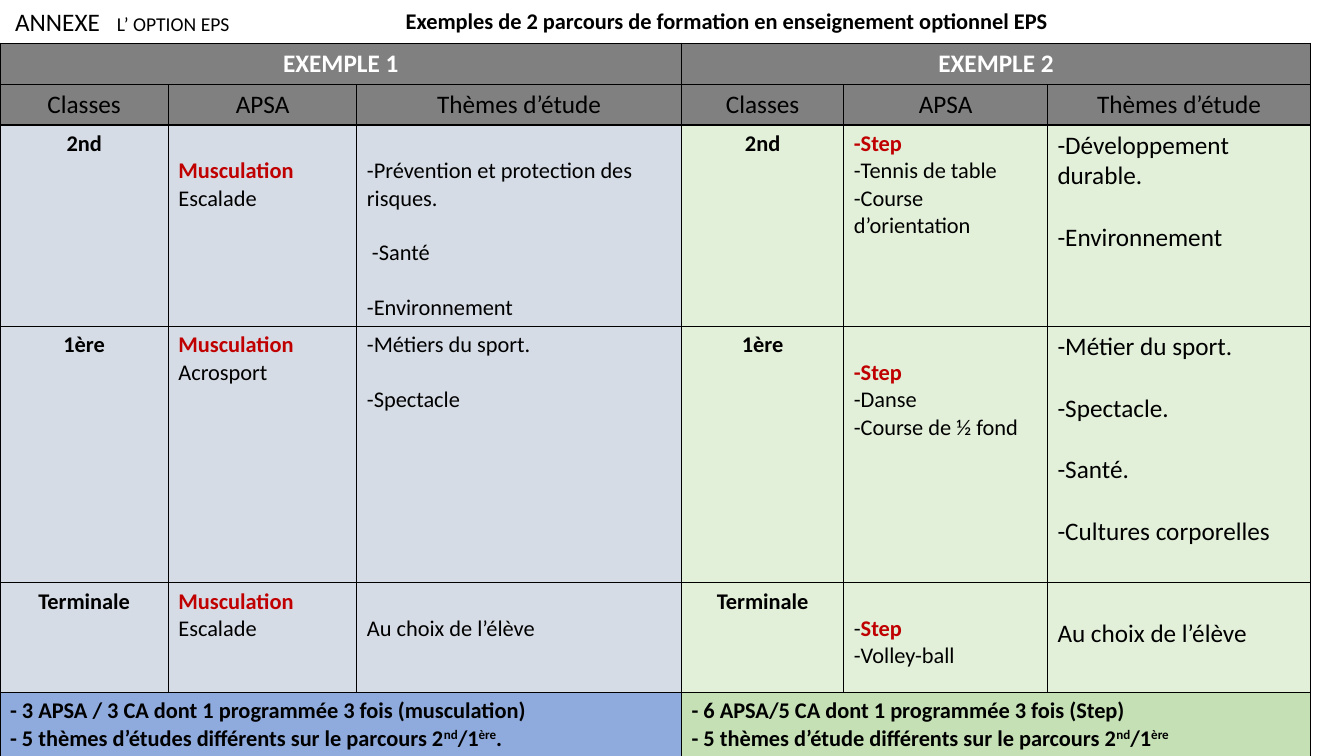
from collections import namedtuple

from lxml.etree import SubElement
from pptx import Presentation
from pptx.dml.color import RGBColor
from pptx.enum.text import MSO_ANCHOR, MSO_AUTO_SIZE, PP_ALIGN
from pptx.oxml.ns import qn
from pptx.util import Inches, Pt

BLACK = RGBColor(0x00, 0x00, 0x00)
WHITE = RGBColor(0xFF, 0xFF, 0xFF)
RED = RGBColor(0xC0, 0x00, 0x00)
GREY = RGBColor(0x80, 0x80, 0x80)
PALE_BLUE = RGBColor(0xD6, 0xDC, 0xE5)
PALE_GREEN = RGBColor(0xE2, 0xF0, 0xD9)
BLUE = RGBColor(0x8F, 0xAA, 0xDC)
GREEN = RGBColor(0xC5, 0xE0, 0xB4)

LINE_HEIGHT = 1.22
COLUMN_WIDTHS = [1.67, 1.87, 3.22, 1.61, 2.02, 2.61]
ROW_HEIGHTS = [0.41, 0.4, 2, 2.54, 1.09, 0.64]
HEADINGS = ["Classes", "APSA", "Thèmes d’étude"]
LEVELS = ["2nd", "1ère", "Terminale"]

PLAIN = {"size": Pt(16), "bold": False, "color": BLACK}
BOLD = {**PLAIN, "bold": True}
LEAD = {**BOLD, "color": RED}
LARGE = {**PLAIN, "size": Pt(18)}
HEADER = {**LARGE, "bold": True, "color": WHITE}
SMALL = {**PLAIN, "size": Pt(14)}
RAISED = {**BOLD, "baseline": 30000}

Line = namedtuple("Line", "runs gap", defaults=[False])
Example = namedtuple("Example", "title fill summary_fill sports themes summary")


def line(text, style=PLAIN, gap=False):
    """Return a line of one run, optionally preceded by a one-line gap."""
    return Line([(text, style)], gap)


def summary(first, second, ending=()):
    """Return the two closing lines of an example."""
    runs = [(second, BOLD), ("nd", RAISED), ("/1", BOLD), ("ère", RAISED), *ending]
    return [line(first, BOLD), Line(runs)]


EXAMPLES = [
    Example(
        "EXEMPLE 1", PALE_BLUE, BLUE,
        [
            [line("Musculation", LEAD, True), line("Escalade")],
            [line("Musculation", LEAD), line("Acrosport")],
            [line("Musculation", LEAD), line("Escalade")],
        ],
        [
            [line("-Prévention et protection des risques.", gap=True),
             line(" -Santé", gap=True), line("-Environnement", gap=True)],
            [line("-Métiers du sport."), line("-Spectacle", gap=True)],
            [line("Au choix de l’élève", gap=True)],
        ],
        summary("- 3 APSA / 3 CA dont 1 programmée 3 fois (musculation)",
                "- 5 thèmes d’études différents sur le parcours 2", [(".", BOLD)]),
    ),
    Example(
        "EXEMPLE 2", PALE_GREEN, GREEN,
        [
            [line("-Step", LEAD), line("-Tennis de table"), line("-Course d’orientation")],
            [line("-Step", LEAD, True), line("-Danse"), line("-Course de ½ fond")],
            [Line([("-", PLAIN), ("Step", LEAD)], True), line("-Volley-ball")],
        ],
        [
            [line("-Développement durable.", LARGE), line("-Environnement", LARGE, True)],
            [line("-Métier du sport.", LARGE), line("-Spectacle.", LARGE, True),
             line("-Santé.", LARGE, True), line("-Cultures corporelles", LARGE, True)],
            [line("Au choix de l’élève", LARGE, True)],
        ],
        summary("- 6 APSA/5 CA dont 1 programmée 3 fois (Step)",
                "- 5 thèmes d’étude différents sur le parcours 2"),
    ),
]


class SlideBuilder:
    """Hold the font and the current slide, and add its elements."""

    def __init__(self, slide, font_name):
        """Keep the slide and the font name."""
        self.slide = slide
        self.font_name = font_name

    def add_run(self, paragraph, text, style):
        """Add a run with the values of a style."""
        run = paragraph.add_run()
        run.text = text
        run.font.name = self.font_name
        for name, value in style.items():
            if name == "color":
                run.font.color.rgb = value
            elif name == "baseline":
                run._r.get_or_add_rPr().set("baseline", str(value))
            else:
                setattr(run.font, name, value)

    def add_text(self, box, runs, frame_format, paragraph_format, tab=None):
        """Add a one-paragraph text box, with an optional tab stop."""
        shape = self.slide.shapes.add_textbox(*map(Inches, box))
        paragraph = shape.text_frame.paragraphs[0]
        if tab:
            tab_list = SubElement(paragraph._p.get_or_add_pPr(), qn("a:tabLst"))
            SubElement(tab_list, qn("a:tab"), pos=str(Inches(tab)), algn="l")
        for target, values in ((shape.text_frame, frame_format), (paragraph, paragraph_format)):
            for name, value in values.items():
                setattr(target, name, value)
        for text, style in runs:
            self.add_run(paragraph, text, style)

    def add_table(self, left, top, widths, heights):
        """Add an unbanded table with thin black borders."""
        box = map(Inches, (left, top, sum(widths), sum(heights)))
        table = self.slide.shapes.add_table(len(heights), len(widths), *box).table
        for name in ("first_row", "horz_banding"):
            setattr(table, name, False)
        for column, width in zip(table.columns, widths):
            column.width = Inches(width)
        for row, height in zip(table.rows, heights):
            row.height = Inches(height)
        for cell in table.iter_cells():
            properties = cell._tc.get_or_add_tcPr()
            for side in ("a:lnL", "a:lnR", "a:lnT", "a:lnB"):
                border = SubElement(properties, qn(side), w=str(Pt(1)))
                SubElement(SubElement(border, qn("a:solidFill")), qn("a:srgbClr"), val=str(BLACK))
        return table

    def fill_cell(self, cell, fill, lines, alignment=PP_ALIGN.LEFT):
        """Colour a cell and write its lines."""
        cell.fill.solid()
        cell.fill.fore_color.rgb = fill
        for index, (runs, gap) in enumerate(lines):
            frame = cell.text_frame
            paragraph = frame.add_paragraph() if index else frame.paragraphs[0]
            paragraph.alignment = alignment
            space = Pt(LINE_HEIGHT * runs[0][1]["size"].pt) if gap else 0
            if index:
                paragraph.space_before = space
            else:
                cell.margin_top = Inches(0.05) + space
            for text, style in runs:
                self.add_run(paragraph, text, style)

    def add_example(self, table, first, example):
        """Fill the three columns of one example."""
        center = PP_ALIGN.CENTER
        last_row = len(ROW_HEIGHTS) - 1
        for row in (0, last_row):
            table.cell(row, first).merge(table.cell(row, first + 2))
        self.fill_cell(table.cell(0, first), GREY, [line(example.title, HEADER)], center)
        for offset, heading in enumerate(HEADINGS):
            self.fill_cell(table.cell(1, first + offset), GREY, [line(heading, LARGE)], center)
        for row, (level, sports, themes) in enumerate(zip(LEVELS, example.sports, example.themes), 2):
            self.fill_cell(table.cell(row, first), example.fill, [line(level, BOLD)], center)
            self.fill_cell(table.cell(row, first + 1), example.fill, sports)
            self.fill_cell(table.cell(row, first + 2), example.fill, themes)
        self.fill_cell(table.cell(last_row, first), example.summary_fill, example.summary)


def main():
    """Build and save the presentation."""
    presentation = Presentation()
    presentation.slide_width = Inches(13.33)
    presentation.slide_height = Inches(7.5)
    builder = SlideBuilder(presentation.slides.add_slide(presentation.slide_layouts[6]), "Calibri")
    builder.add_text(
        (1.46, -0.08, 11.5, 0.6),
        [("Exemples de 2 parcours de formation en enseignement optionnel EPS", BOLD)],
        {"word_wrap": True, "vertical_anchor": MSO_ANCHOR.MIDDLE},
        {"alignment": PP_ALIGN.CENTER, "line_spacing": 0.9},
    )
    table = builder.add_table(0, 0.43, COLUMN_WIDTHS, ROW_HEIGHTS)
    for index, example in enumerate(EXAMPLES):
        builder.add_example(table, index * len(HEADINGS), example)
    builder.add_text(
        (0, 0.01, 2.59, 0.4),
        [("ANNEXE\t", LARGE), ("L’ OPTION EPS", SMALL)],
        {"word_wrap": False, "auto_size": MSO_AUTO_SIZE.SHAPE_TO_FIT_TEXT, "margin_left": Inches(0.15)},
        {"alignment": PP_ALIGN.LEFT},
        tab=1.01,
    )
    presentation.save("out.pptx")


if __name__ == "__main__":
    main()
